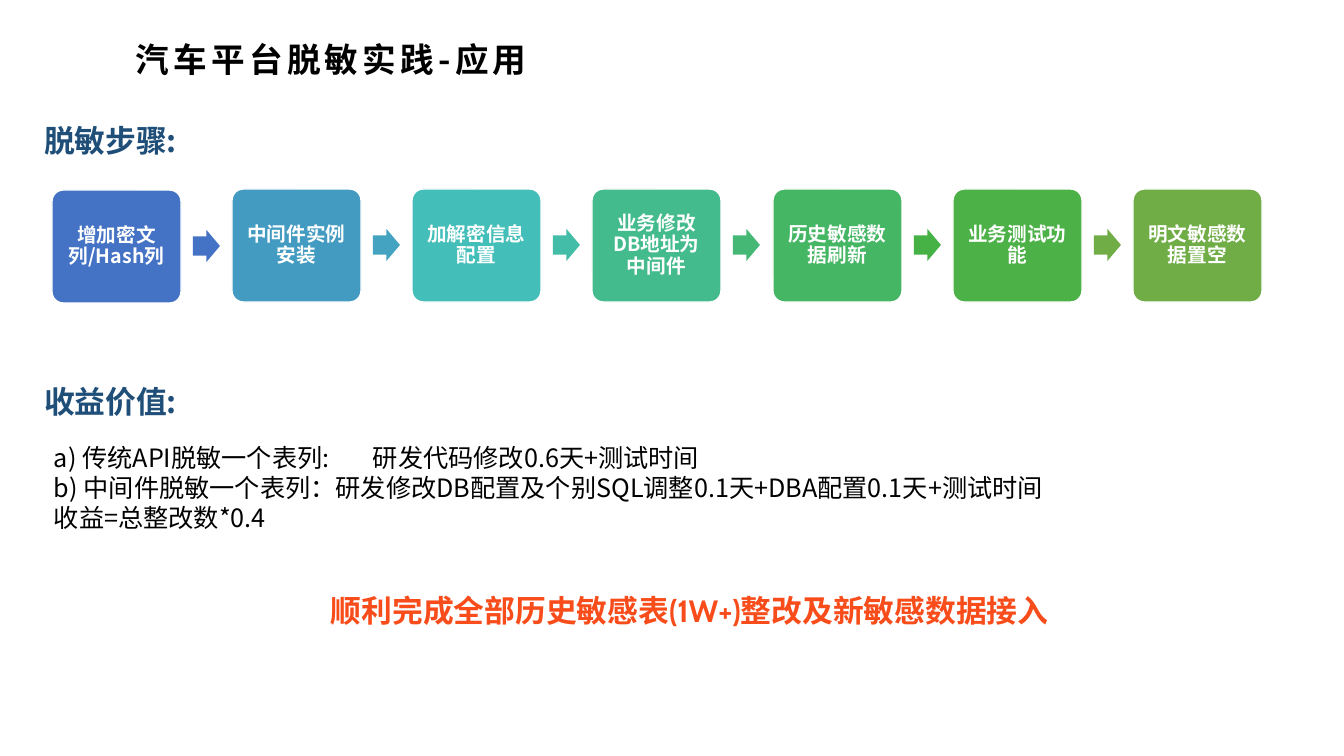
"""Build the slide on data masking steps and their benefits."""
from lxml.etree import SubElement
from pptx import Presentation
from pptx.dml.color import RGBColor as RGB
from pptx.enum.shapes import MSO_SHAPE as SHAPE
from pptx.enum.text import MSO_ANCHOR as ANCHOR, MSO_AUTO_SIZE as FIT, PP_ALIGN as ALIGN
from pptx.oxml.ns import qn
from pptx.util import Emu, Pt

CJK = "Noto Sans CJK SC"
BLACK = RGB(0x00, 0x00, 0x00)
WHITE = RGB(0xFF, 0xFF, 0xFF)
NAVY = RGB(0x1F, 0x4E, 0x79)
ORANGE = RGB(0xF8, 0x4C, 0x1A)

TITLE = {"size": Pt(24), "bold": True, "name": CJK, "color": BLACK}
HEADING = {"size": Pt(22), "bold": True, "name": CJK, "color": NAVY}
BODY = {"size": Pt(18), "bold": False, "name": CJK, "color": BLACK}
RESULT = {"size": Pt(22), "bold": True, "name": "Cabin", "color": ORANGE}
STEP = {"size": Pt(14), "bold": True, "name": CJK, "color": WHITE}

TITLE_SPACING = 300
INSET, BODY_INSET, BODY_TAB = 10, 20, 319
TEXTS = [
    (["汽车平台脱敏实践-应用"], (126, 34, 932, 50), TITLE, INSET),
    (["脱敏步骤:"], (34, 117, 1246, 47), HEADING, INSET),
    (["收益价值:"], (34, 378, 1246, 47), HEADING, INSET),
    (["a) 传统API脱敏一个表列:\t研发代码修改0.6天+测试时间",
      "b) 中间件脱敏一个表列：研发修改DB配置及个别SQL调整0.1天+DBA配置0.1天+测试时间",
      "收益=总整改数*0.4"], (34, 437, 1272, 102), BODY, BODY_INSET),
    (["顺利完成全部历史敏感表(1W+)整改及新敏感数据接入"], (321, 587, 789, 47), RESULT, INSET),
]

STEPS = [
    ("增加密文列/Hash列", RGB(0x44, 0x72, 0xC4), RGB(0x44, 0x72, 0xC4)),
    ("中间件实例安装", RGB(0x44, 0x9B, 0xC1), RGB(0x44, 0xA3, 0xC0)),
    ("加解密信息配置", RGB(0x43, 0xBE, 0xB9), RGB(0x43, 0xBD, 0xA7)),
    ("业务修改DB地址为中间件", RGB(0x43, 0xBB, 0x8D), RGB(0x44, 0xB8, 0x74)),
    ("历史敏感数据刷新", RGB(0x45, 0xB6, 0x64), RGB(0x46, 0xB2, 0x46)),
    ("业务测试功能", RGB(0x4C, 0xB1, 0x46), RGB(0x70, 0xAD, 0x47)),
    ("明文敏感数据置空", RGB(0x70, 0xAD, 0x47), None),
]
FIRST_LEFT, LAST_LEFT, STEP_TOP = 52, 1133, 189
STEP_W, STEP_H = 129, 113
ARROW_OFFSET, ARROW_W, ARROW_H = 141, 27, 32


def px(length):
    return Emu(round(length * 9144000 / 1008))


def write(paragraph, text, style):
    run = paragraph.add_run()
    run.text = text
    for key, value in style.items():
        if key == "color":
            run.font.color.rgb = value
        else:
            setattr(run.font, key, value)
    properties = run.font._element
    SubElement(properties, qn("a:ea")).set("typeface", CJK)
    return properties


def add_text(slide, lines, place, style, inset):
    frame = slide.shapes.add_textbox(*map(px, place)).text_frame
    layout = {"word_wrap": True, "auto_size": FIT.SHAPE_TO_FIT_TEXT, "margin_left": px(inset)}
    for key, value in layout.items():
        setattr(frame, key, value)
    for index, line in enumerate(lines):
        paragraph = frame.add_paragraph() if index else frame.paragraphs[0]
        if "\t" in line:
            tabs = SubElement(paragraph._p.get_or_add_pPr(), qn("a:tabLst"))
            tab = SubElement(tabs, qn("a:tab"))
            tab.set("pos", str(px(BODY_TAB)))
            tab.set("algn", "l")
        properties = write(paragraph, line, style)
        if style is TITLE:
            properties.set("spc", str(TITLE_SPACING))


def add_block(slide, kind, place, fill, adjustments):
    block = slide.shapes.add_shape(kind, *map(px, place))
    block.shadow.inherit = False
    block.fill.solid()
    block.fill.fore_color.rgb = fill
    for index, value in enumerate(adjustments):
        block.adjustments[index] = value
    return block


def add_step(slide, index, label, fill, arrow_fill):
    left = FIRST_LEFT + round((LAST_LEFT - FIRST_LEFT) * index / (len(STEPS) - 1))
    top = STEP_TOP if index else STEP_TOP + 1
    step = add_block(slide, SHAPE.ROUNDED_RECTANGLE, (left, top, STEP_W, STEP_H), fill, [0.1])
    step.line.color.rgb = WHITE
    step.line.width = Pt(1)
    frame = step.text_frame
    layout = {"word_wrap": True, "vertical_anchor": ANCHOR.MIDDLE}
    layout.update({f"margin_{side}": px(INSET) for side in ("left", "top", "right", "bottom")})
    for key, value in layout.items():
        setattr(frame, key, value)
    paragraph = frame.paragraphs[0]
    paragraph.alignment = ALIGN.CENTER
    paragraph.line_spacing = 0.9
    write(paragraph, label, STEP)
    if arrow_fill is not None:
        arrow_top = top + (STEP_H - ARROW_H) // 2
        place = (left + ARROW_OFFSET, arrow_top, ARROW_W, ARROW_H)
        arrow = add_block(slide, SHAPE.RIGHT_ARROW, place, arrow_fill, [0.6, 0.5])
        arrow.line.fill.background()


def main():
    deck = Presentation()
    deck.slide_width, deck.slide_height = px(1344), px(756)
    slide = deck.slides.add_slide(deck.slide_layouts[6])
    for index, step in enumerate(STEPS):
        add_step(slide, index, *step)
    for text in TEXTS:
        add_text(slide, *text)
    deck.save("out.pptx")


if __name__ == "__main__":
    main()
